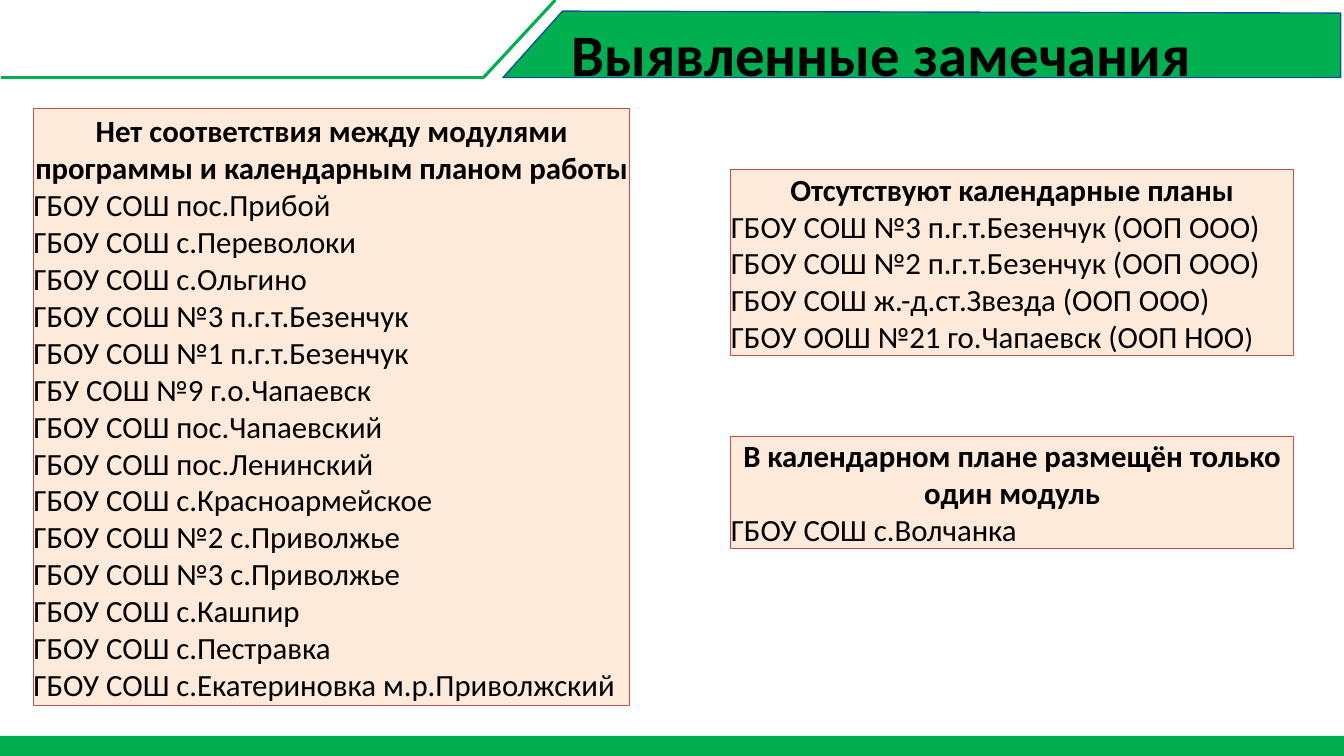
"""Builds the slide on remarks found in school programmes."""
from dataclasses import dataclass

from lxml import etree
from pptx import Presentation
from pptx import util as u
from pptx.dml.color import RGBColor
from pptx.enum import shapes, text
from pptx.oxml.ns import qn


@dataclass(frozen=True)
class Theme:
    """Colours, font and type sizes of the slide."""
    green: str = "00B050"
    blue: str = "0C549E"
    red: str = "C0504D"
    peach: str = "FDEADA"
    ink: str = "000000"
    font: str = "Calibri"
    title_size: float = 42
    body_size: float = 22
    bracket_size: float = 20


class SlideBuilder:
    """Draws styled elements on one slide, with lengths in points."""

    def __init__(self, slide, theme):
        self.shapes = slide.shapes
        self.theme = theme

    def paint(self, shape, fill, line=None, width=0.75):
        """Sets the fill and outline of a shape."""
        shape.shadow.inherit = False
        shape.fill.solid()
        shape.fill.fore_color.rgb = RGBColor.from_string(fill)
        if line:
            shape.line.color.rgb = RGBColor.from_string(line)
            shape.line.width = u.Pt(width)
        else:
            shape.line.fill.background()

    def rectangle(self, left, top, width, height, fill, line=None):
        """Adds a filled rectangle."""
        block = self.shapes.add_shape(
            shapes.MSO_SHAPE.RECTANGLE,
            u.Pt(left), u.Pt(top), u.Pt(width), u.Pt(height))
        self.paint(block, fill, line)
        return block

    def polygon(self, corners, fill, line):
        """Adds a closed outline through the given corners."""
        points = [(u.Pt(x), u.Pt(y)) for x, y in corners]
        outline = self.shapes.build_freeform(*points[0])
        outline.add_line_segments(points[1:], close=True)
        self.paint(outline.convert_to_shape(), fill, line, 1)

    def rule(self, start, end):
        """Adds a straight green line."""
        rule = self.shapes.add_connector(
            shapes.MSO_CONNECTOR.STRAIGHT,
            *(u.Pt(value) for value in (*start, *end)))
        rule.line.color.rgb = RGBColor.from_string(self.theme.green)
        rule.line.width = u.Pt(2.25)
        etree.SubElement(rule.line._get_or_add_ln().getparent(), qn("a:effectLst"))

    def frame(self, shape):
        """Prepares a text frame without margins."""
        frame = shape.text_frame
        frame.word_wrap = True
        frame.auto_size = text.MSO_AUTO_SIZE.NONE
        frame.vertical_anchor = text.MSO_ANCHOR.MIDDLE
        frame.margin_left = frame.margin_right = 0
        frame.margin_top = frame.margin_bottom = 0
        return frame

    def run(self, paragraph, words, size, bold=False):
        """Adds one run of text."""
        run = paragraph.add_run()
        run.text = words
        run.font.name = self.theme.font
        run.font.size = u.Pt(size)
        run.font.bold = bold
        run.font.color.rgb = RGBColor.from_string(self.theme.ink)

    def title(self, left, top, width, height, words):
        """Adds the slide title."""
        title = self.shapes.add_textbox(
            u.Pt(left), u.Pt(top), u.Pt(width), u.Pt(height))
        self.run(self.frame(title).paragraphs[0], words, self.theme.title_size, True)

    def remark(self, left, top, width, height, heading, schools, bracket=""):
        """Adds a panel with a heading, its schools and a smaller last bracket."""
        theme = self.theme
        panel = self.rectangle(left, top, width, height, theme.peach, theme.red)
        frame = self.frame(panel)
        first = frame.paragraphs[0]
        first.alignment = text.PP_ALIGN.CENTER
        self.run(first, heading, theme.body_size, True)
        for school in schools:
            entry = frame.add_paragraph()
            entry.alignment = text.PP_ALIGN.LEFT
            self.run(entry, school, theme.body_size)
        if bracket:
            self.run(entry, bracket, theme.bracket_size)


def main():
    """Builds and saves the presentation."""
    deck = Presentation()
    deck.slide_width, deck.slide_height = u.Pt(960), u.Pt(540)
    theme = Theme()
    page = SlideBuilder(deck.slides.add_slide(deck.slide_layouts[6]), theme)

    page.polygon([(401.8, 8), (957.6, 9.4), (957.6, 55.4), (359.3, 55.4)],
                 theme.green, theme.blue)
    page.rectangle(0, 525.6, 960, 14.4, theme.green)
    bend = (345.4, 55.4)
    page.rule((396.7, 0), bend)
    page.rule(bend, (0.7, 55.4))
    page.title(408.2, 12.2, 545.8, 51.1, "Выявленные замечания")

    right, right_width = 522, 401.8
    page.remark(right, 121, right_width, 133.2, "Отсутствуют календарные планы", [
        "ГБОУ СОШ №3 п.г.т.Безенчук (ООП ООО)",
        "ГБОУ СОШ №2 п.г.т.Безенчук (ООП ООО)",
        "ГБОУ СОШ ж.-д.ст.Звезда (ООП ООО)",
        "ГБОУ ООШ №21 го.Чапаевск (ООП НОО",
    ], bracket=")")
    page.remark(
        23.8, 77.8, 426.2, 426.2,
        "Нет соответствия между модулями программы и календарным планом работы", [
            "ГБОУ СОШ пос.Прибой",
            "ГБОУ СОШ с.Переволоки",
            "ГБОУ СОШ с.Ольгино",
            "ГБОУ СОШ №3 п.г.т.Безенчук",
            "ГБОУ СОШ №1 п.г.т.Безенчук",
            "ГБУ СОШ №9 г.о.Чапаевск",
            "ГБОУ СОШ пос.Чапаевский",
            "ГБОУ СОШ пос.Ленинский",
            "ГБОУ СОШ с.Красноармейское",
            "ГБОУ СОШ №2 с.Приволжье",
            "ГБОУ СОШ №3 с.Приволжье",
            "ГБОУ СОШ с.Кашпир",
            "ГБОУ СОШ с.Пестравка",
            "ГБОУ СОШ с.Екатериновка м.р.Приволжский",
        ])
    page.remark(right, 311.8, right_width, 79.9,
                "В календарном плане размещён только один модуль",
                ["ГБОУ СОШ с.Волчанка"])
    deck.save("out.pptx")


if __name__ == "__main__":
    main()
